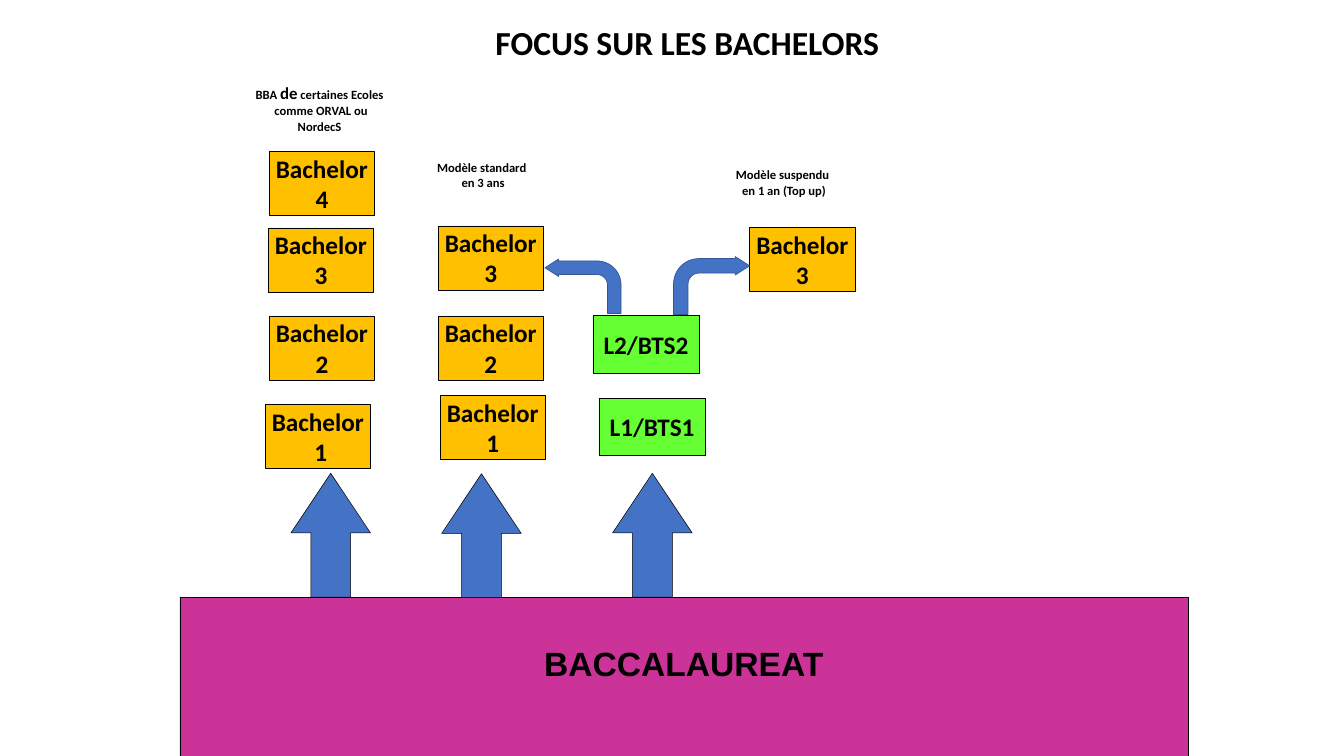
from dataclasses import dataclass

from pptx import Presentation
from pptx.dml.color import RGBColor
from pptx.enum.shapes import MSO_SHAPE
from pptx.enum.text import MSO_ANCHOR, MSO_AUTO_SIZE, PP_ALIGN
from pptx.oxml.ns import qn
from pptx.util import Emu, Pt

PX_PER_INCH = 100


@dataclass(frozen=True)
class Theme:
    base: str = "CC3399"
    bachelor: str = "FFC000"
    bts: str = "66FF33"
    arrow: str = "4472C4"
    arrow_line: str = "325491"
    ink: str = "000000"
    font: str = "Calibri"
    base_font: str = "Arial"
    title: int = 48
    step: int = 36
    accent: int = 24
    note: int = 18


THEME = Theme()


def px(n):
    return Emu(n * 914400 // PX_PER_INCH)


def add_shape(slide, kind, box, fill, line=THEME.ink, width=0.75):
    s = slide.shapes.add_shape(kind, *map(px, box))
    s.shadow.inherit = False
    s.fill.solid()
    s.fill.fore_color.rgb = RGBColor.from_string(fill)
    s.line.color.rgb = RGBColor.from_string(line)
    s.line.width = Pt(width)
    return s


def write(tf, lines, size, font=THEME.font, align=PP_ALIGN.CENTER):
    tf.text = "\n".join(lines)
    for p in tf.paragraphs:
        p.alignment = align
        for r in p.runs:
            style_run(r, size, font)


def style_run(r, size, font=THEME.font):
    r.font.name = font
    r.font.size = Pt(size)
    r.font.bold = True
    r.font.color.rgb = RGBColor.from_string(THEME.ink)


def add_step(slide, box, lines, fill):
    s = add_shape(slide, MSO_SHAPE.RECTANGLE, box, fill)
    tf = s.text_frame
    tf.word_wrap = False
    tf.vertical_anchor = MSO_ANCHOR.MIDDLE
    write(tf, lines, THEME.step)


def add_bachelor(slide, x, y, year):
    add_step(slide, (x, y, 209, 127), ("Bachelor", year), THEME.bachelor)


def add_bts(slide, x, y, name):
    add_step(slide, (x, y, 211, 114), (name,), THEME.bts)


def add_rising_arrow(slide, x, y):
    s = add_shape(slide, MSO_SHAPE.LEFT_ARROW, (x, y, 246, 158), THEME.arrow)
    s.rotation = 90
    s.adjustments[1] = 0.75


def add_bent_arrow(slide, box, flip=False):
    s = add_shape(slide, MSO_SHAPE.BENT_ARROW, box, THEME.arrow, THEME.arrow_line, 1)
    for i, value in enumerate((0.25, 0.16, 0.25, 0.44)):
        s.adjustments[i] = value
    if flip:
        s._element.spPr.find(qn("a:xfrm")).set("flipH", "1")


def add_text(slide, box, lines, size, wrap=False, **style):
    tf = slide.shapes.add_textbox(*map(px, box)).text_frame
    tf.word_wrap = wrap
    tf.auto_size = MSO_AUTO_SIZE.SHAPE_TO_FIT_TEXT
    write(tf, lines, size, **style)
    return tf


def add_school_note(slide):
    tf = add_text(slide, (492, 160, 284, 81), ("BBA ", " comme ORVAL ou NordecS"), THEME.note)
    p = tf.paragraphs[0]
    for text, size in (("de", THEME.accent), (" certaines Ecoles", THEME.note)):
        r = p.add_run()
        r.text = text
        style_run(r, size)


def main():
    prs = Presentation()
    prs.slide_width, prs.slide_height = px(2666), px(1500)
    slide = prs.slides.add_slide(prs.slide_layouts[6])

    add_shape(slide, MSO_SHAPE.RECTANGLE, (357, 1185, 2000, 315), THEME.base)
    add_text(slide, (740, 1270, 1233, 91), ("BACCALAUREAT",), THEME.title,
             wrap=True, font=THEME.base_font)

    for x, y in ((533, 983), (832, 984), (1171, 983)):
        add_rising_arrow(slide, x, y)

    for x, y, year in (
        (869, 448, "3"), (869, 627, "2"), (873, 784, "1"),
        (534, 300, "4"), (532, 452, "3"), (534, 627, "2"), (526, 803, " 1"),
        (1487, 451, "3"),
    ):
        add_bachelor(slide, x, y, year)

    add_bts(slide, 1188, 790, "L1/BTS1")
    add_bts(slide, 1176, 626, "L2/BTS2")

    add_bent_arrow(slide, (1081, 514, 151, 108), flip=True)
    add_bent_arrow(slide, (1336, 509, 151, 115))

    add_text(slide, (973, 38, 789, 91), ("FOCUS SUR LES BACHELORS",), THEME.title,
             align=PP_ALIGN.LEFT)
    add_school_note(slide)
    add_text(slide, (856, 312, 199, 71), ("Modèle standard", " en 3 ans"), THEME.note)
    add_text(slide, (1449, 327, 207, 71), ("Modèle suspendu", " en 1 an (Top up)"), THEME.note)

    prs.save("out.pptx")


if __name__ == "__main__":
    main()
